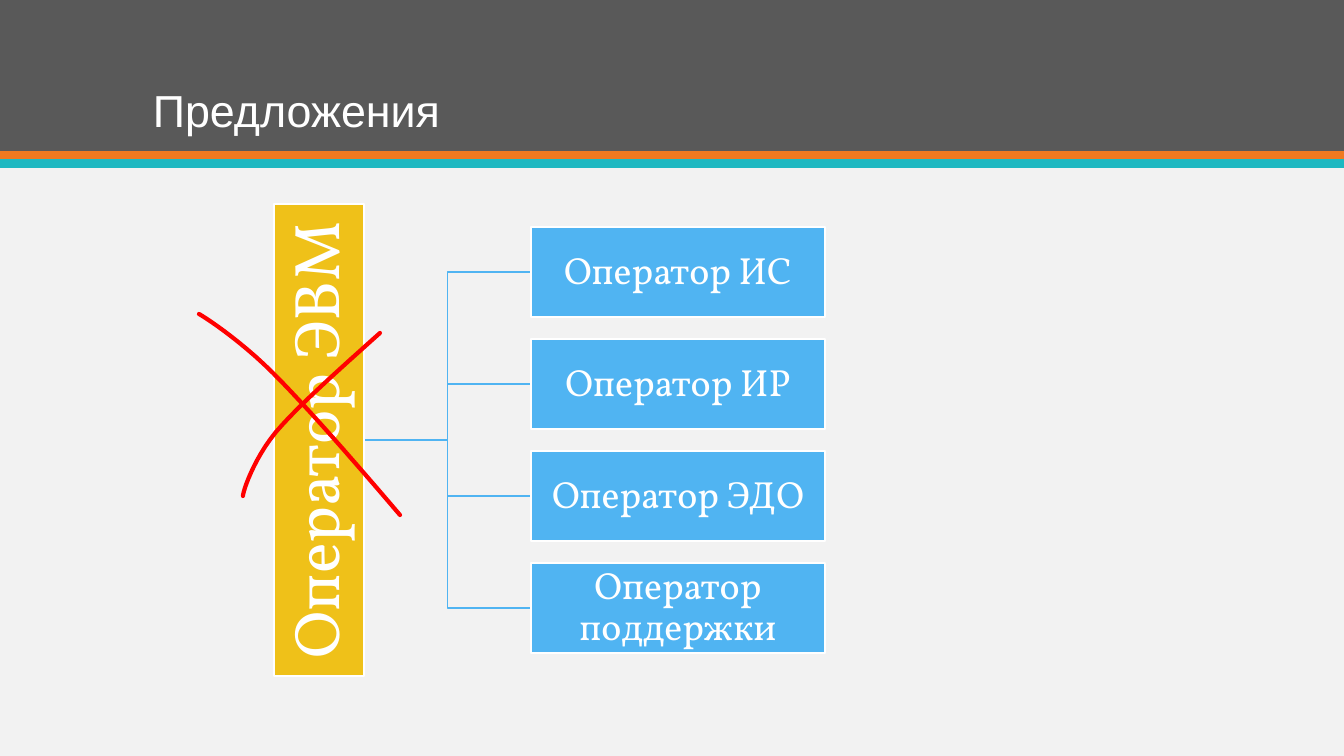
from lxml.etree import SubElement
from pptx import Presentation
from pptx.dml.color import RGBColor
from pptx.enum.shapes import MSO_CONNECTOR as Connector, MSO_SHAPE as Shape
from pptx.enum.text import MSO_ANCHOR as Anchor, PP_ALIGN as Align
from pptx.oxml.ns import qn
from pptx.util import Pt

SCALE = 914400 / 100.8  # EMU in one px
COLORS = {
    "page": "F2F2F2", "header": "595959", "orange": "EF7920", "teal": "1EB8C1",
    "yellow": "EFC119", "blue": "50B4F2", "white": "FFFFFF", "red": "FF0000",
}


def emu(px):
    return round(px * SCALE)


def color(name):
    return RGBColor.from_string(COLORS[name])


def bezier(start, first, second, end, steps=12):
    """Points along a cubic curve, without its start."""
    for step in range(1, steps + 1):
        t = step / steps
        u = 1 - t
        yield tuple(u**3 * a + 3 * u * u * t * b + 3 * u * t * t * c + t**3 * d
                    for a, b, c, d in zip(start, first, second, end))


class Painter:
    """Draws styled elements on one slide, in px."""
    heading_font = "Arial"
    body_font = "Vollkorn"

    def __init__(self, page):
        self.page = page
        page.background.fill.solid()
        page.background.fill.fore_color.rgb = color("page")

    def rectangle(self, left, top, width, height, fill, line=None):
        box = self.page.shapes.add_shape(
            Shape.RECTANGLE, *map(emu, (left, top, width, height)))
        box.shadow.inherit = False
        box.fill.solid()
        box.fill.fore_color.rgb = color(fill)
        if line:
            self.outline(box, line, 1)
        else:
            box.line.fill.background()
        return box

    def outline(self, item, line, width):
        item.line.color.rgb = color(line)
        item.line.width = Pt(width)

    def label(self, box, text, size, font, align, anchor):
        frame = box.text_frame
        frame.word_wrap = True
        frame.vertical_anchor = anchor
        para = frame.paragraphs[0]
        para.text = text
        para.alignment = align
        para.line_spacing = 0.9
        para.font.size = Pt(size)
        para.font.name = font
        para.font.color.rgb = color("white")

    def title(self, left, top, width, height, text):
        box = self.page.shapes.add_textbox(*map(emu, (left, top, width, height)))
        self.label(box, text, 32, self.heading_font, Align.LEFT, Anchor.BOTTOM)

    def node(self, left, top, width, height, text, fill, size, inset):
        box = self.rectangle(left, top, width, height, fill, "white")
        frame = box.text_frame
        frame.margin_left = frame.margin_right = emu(inset)
        frame.margin_top = frame.margin_bottom = emu(inset)
        self.label(box, text, size, self.body_font, Align.CENTER, Anchor.MIDDLE)
        return box

    def branch(self, *ends):
        """Elbow line between two points."""
        link = self.page.shapes.add_connector(Connector.ELBOW, *map(emu, ends))
        self.outline(link, "blue", 1)
        SubElement(link._element.spPr, qn("a:effectLst"))

    def stroke(self, points):
        """Red pen stroke through two joined cubic curves."""
        curve = [*bezier(*points[:4]), *bezier(*points[3:])]
        builder = self.page.shapes.build_freeform(*map(emu, points[0]))
        builder.add_line_segments([(emu(x), emu(y)) for x, y in curve], close=False)
        pen = builder.convert_to_shape()
        pen.shadow.inherit = False
        pen.fill.background()
        self.outline(pen, "red", 3)
        line = pen._element.spPr.find(qn("a:ln"))
        line.set("cap", "rnd")
        SubElement(line, qn("a:round"))


def main():
    deck = Presentation()
    deck.slide_width, deck.slide_height = emu(1344), emu(756)
    painter = Painter(deck.slides.add_slide(deck.slide_layouts[6]))

    for top, height, fill in ((0, 151, "header"), (151, 9, "orange"), (159, 9, "teal")):
        painter.rectangle(0, top, 1344, height, fill)
    painter.title(143, 28, 1058, 114, "Предложения")

    roles = ["Оператор ИС", "Оператор ИР", "Оператор ЭДО", "Оператор поддержки"]
    left, first_top, width, height, pitch = 531, 227, 294, 90, 112
    tops = [first_top + pitch * row for row in range(len(roles))]
    middle = (tops[0] + tops[-1] + height) // 2

    root_center, root_length = 319, 472
    for top in tops:
        painter.branch(root_center + height // 2, middle, left, top + height // 2)
    root = painter.node(root_center - root_length // 2, middle - height // 2,
                        root_length, height, "Оператор ЭВМ", "yellow", 46, 3)
    root.rotation = 270
    for top, role in zip(tops, roles):
        painter.node(left, top, width, height, role, "blue", 27, 2)

    painter.stroke([(380, 333), (340, 369), (299, 405), (276, 432),
                    (253, 460), (243, 492), (243, 496)])
    painter.stroke([(400, 515), (354, 461), (306, 406), (273, 373),
                    (239, 339), (203, 316), (199, 314)])
    deck.save("out.pptx")


if __name__ == "__main__":
    main()
